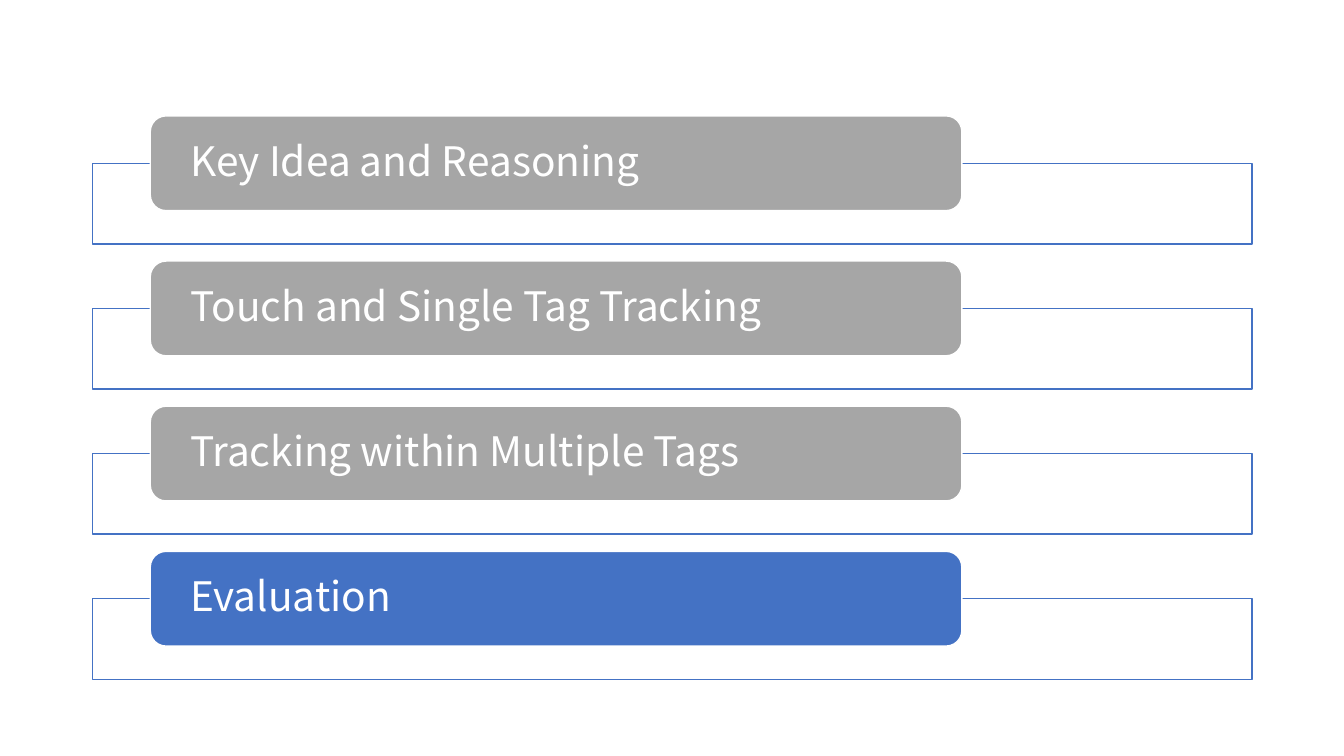
"""Build an agenda slide with the current section highlighted."""
from lxml import etree
from pptx import Presentation
from pptx.dml.color import RGBColor
from pptx.enum.shapes import MSO_SHAPE
from pptx.enum.text import MSO_ANCHOR, PP_ALIGN
from pptx.oxml.ns import qn
from pptx.util import Inches, Pt

RECTANGLE = MSO_SHAPE.RECTANGLE
ROUNDED = MSO_SHAPE.ROUNDED_RECTANGLE
MIDDLE = MSO_ANCHOR.MIDDLE
LEFT = PP_ALIGN.LEFT
WHITE = RGBColor(0xFF, 0xFF, 0xFF)
GRAY = RGBColor(0xA6, 0xA6, 0xA6)
BLUE = RGBColor(0x44, 0x72, 0xC4)
FONT = "Noto Sans CJK SC"
SECTIONS = [
    "Key Idea and Reasoning",
    "Touch and Single Tag Tracking",
    "Tracking within Multiple Tags",
    "Evaluation",
]
CURRENT = "Evaluation"
FIRST_TOP = 1.15
PITCH = 1.44


def add_box(page, kind, left, top, width, height, fill, line):
    """Add a filled and outlined shape without a shadow."""
    box = page.shapes.add_shape(
        kind, Inches(left), Inches(top), Inches(width), Inches(height)
    )
    box.shadow.inherit = False
    box.fill.solid()
    box.fill.fore_color.rgb = fill
    box.line.color.rgb = line
    box.line.width = Pt(1)
    return box


def set_opacity(box, percent):
    """Make the solid fill of a box partly transparent."""
    color = box.fill._xPr.find(qn("a:solidFill"))[0]
    etree.SubElement(color, qn("a:alpha")).set("val", str(percent * 1000))


def write_title(box, text):
    """Write a section title inside its bar."""
    frame = box.text_frame
    frame.word_wrap = True
    frame.vertical_anchor = MIDDLE
    frame.margin_left = frame.margin_right = Inches(0.35)
    frame.margin_top = frame.margin_bottom = Inches(0.05)
    para = frame.paragraphs[0]
    para.text = text
    para.alignment = LEFT
    para.line_spacing = 0.9
    para.font.name = FONT
    para.font.size = Pt(29)
    para.font.color.rgb = WHITE


def add_section(page, text, top):
    """Add one section: an outlined panel with a title bar over its top edge."""
    panel = add_box(page, RECTANGLE, 0.92, top + 0.47, 11.5, 0.8, WHITE, BLUE)
    set_opacity(panel, 90)
    color = BLUE if text == CURRENT else GRAY
    bar = add_box(page, ROUNDED, 1.49, top, 8.05, 0.94, color, WHITE)
    write_title(bar, text)


def main():
    """Create the deck and save it."""
    deck = Presentation()
    deck.slide_width = Inches(13.33)
    deck.slide_height = Inches(7.5)
    page = deck.slides.add_slide(deck.slide_layouts[6])
    for index, text in enumerate(SECTIONS):
        add_section(page, text, FIRST_TOP + index * PITCH)
    deck.save("out.pptx")


if __name__ == "__main__":
    main()
